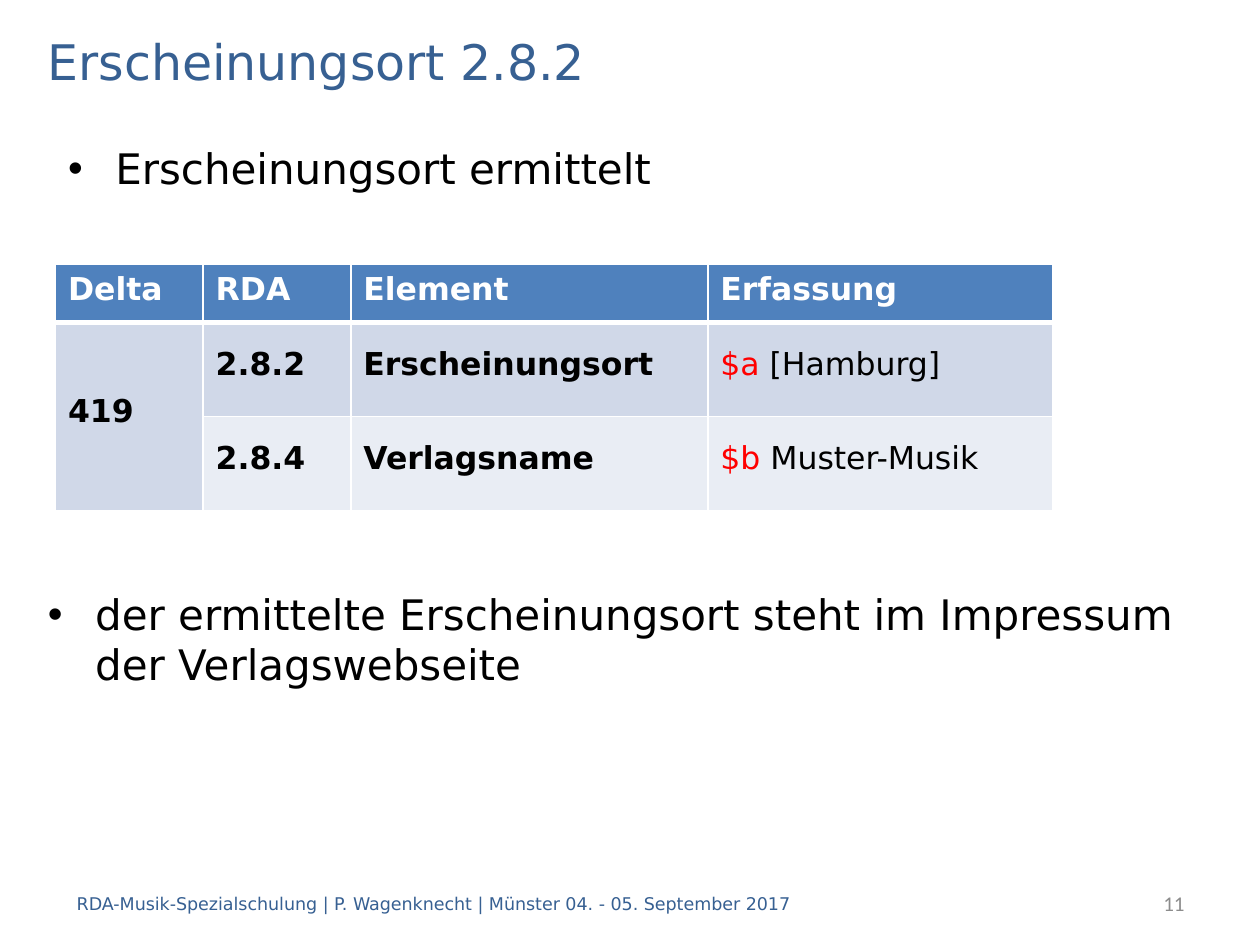
import pptx
import pptx.dml.color
import pptx.enum.text
import pptx.oxml
import pptx.oxml.ns
import pptx.util
from pptx.util import Pt

PP_ALIGN = pptx.enum.text.PP_ALIGN
MIDDLE = pptx.enum.text.MSO_ANCHOR.MIDDLE
SANS = "DejaVu Sans"
BLUE, BLACK, WHITE, RED = "376092", "000000", "FFFFFF", "FF0000"


def rgb(hex_color):
    return pptx.dml.color.RGBColor.from_string(hex_color)


def fill_text(shape, box, text, size, color, font=SANS, align=PP_ALIGN.LEFT):
    """Place a text shape, write one paragraph in it and return that paragraph."""
    shape.left, shape.top, shape.width, shape.height = map(Pt, box)
    frame = shape.text_frame
    frame.word_wrap = True
    frame.auto_size = pptx.enum.text.MSO_AUTO_SIZE.NONE
    frame.text = text
    paragraph = frame.paragraphs[0]
    paragraph.alignment = align
    paragraph.font.name = font
    paragraph.font.size = Pt(size)
    paragraph.font.color.rgb = rgb(color)
    return paragraph


prs = pptx.Presentation()
prs.slide_width, prs.slide_height = Pt(720), Pt(540)
slide = prs.slides.add_slide(prs.slide_layouts.get_by_name("Two Content"))
title, finding, source = slide.placeholders

# Title and bullets
fill_text(title, (20.16, 14.4, 680.4, 40.32), "Erscheinungsort 2.8.2", 28, BLUE)
title.text_frame.vertical_anchor = MIDDLE
bullets = [
    (finding, (31.68, 77.76, 680.4, 51.12), "Erscheinungsort ermittelt"),
    (source, (20.16, 332.64, 680.4, 96.48),
     "der ermittelte Erscheinungsort steht im Impressum der Verlagswebseite"),
]
for bullet, box, text in bullets:
    properties = fill_text(bullet, box, text, 24, BLACK)._p.get_or_add_pPr()
    properties.set("marL", str(Pt(27)))
    properties.set("indent", str(Pt(-27)))

# Footer and page number
footers = [
    ((36.72, 501.84, 601.2, 28.8),
     "RDA-Musik-Spezialschulung | P. Wagenknecht | Münster 04. - 05. September 2017",
     10, BLUE, SANS, PP_ALIGN.LEFT),
    ((569.52, 501.84, 114.48, 28.8), "11", 12, "8C8C8C", "Calibri", PP_ALIGN.RIGHT),
]
for box, *style in footers:
    footer = slide.shapes.add_textbox(0, 0, 0, 0)
    fill_text(footer, box, *style)
    footer.text_frame.vertical_anchor = MIDDLE

# Cataloguing table; the last column pairs a red subfield code with its value
rows = [
    ("4F81BD", ["Delta", "RDA", "Element", "Erfassung"]),
    ("D0D8E8", ["419", "2.8.2", "Erscheinungsort", ("$a", " [Hamburg]")]),
    ("E9EDF4", ["", "2.8.4", "Verlagsname", ("$b", " Muster-Musik")]),
]
column_widths = [84.4, 84.4, 204, 197.2]
row_heights = [33, 53.7, 53.7]
table = slide.shapes.add_table(
    len(rows), len(column_widths), Pt(31.68), Pt(151.2),
    Pt(sum(column_widths)), Pt(sum(row_heights))).table
for column, width in zip(table.columns, column_widths):
    column.width = Pt(width)
for row, height in zip(table.rows, row_heights):
    row.height = Pt(height)

for r, (fill, contents) in enumerate(rows):
    header = r == 0
    for c, content in enumerate(contents):
        cell = table.cell(r, c)
        paragraph = cell.text_frame.paragraphs[0]
        paired = isinstance(content, tuple)
        paragraph.font.name = SANS
        paragraph.font.size = Pt(18)
        paragraph.font.bold = not paired
        parts = content if paired else (content,)
        colors = (RED, BLACK) if paired else (WHITE if header else BLACK,)
        for part, color in zip(parts, colors):
            if part:
                run = paragraph.add_run()
                run.text = part
                run.font.color.rgb = rgb(color)
        if not header:
            cell.vertical_anchor = MIDDLE
            paragraph.line_spacing = Pt(16)
            paragraph.space_before = paragraph.space_after = Pt(6)

        # Borders come before the fill in the cell properties
        cell_properties = cell._tc.get_or_add_tcPr()
        for side in "LRTB":
            thick = (r, side) in ((0, "B"), (1, "T"))
            cell_properties.append(pptx.oxml.parse_xml(
                f'<a:ln{side} {pptx.oxml.ns.nsdecls("a")} w="{Pt(3 if thick else 1)}">'
                f'<a:solidFill><a:srgbClr val="{WHITE}"/></a:solidFill></a:ln{side}>'))
        cell.fill.solid()
        cell.fill.fore_color.rgb = rgb(fill)
table.cell(1, 0).merge(table.cell(2, 0))

prs.save("out.pptx")
